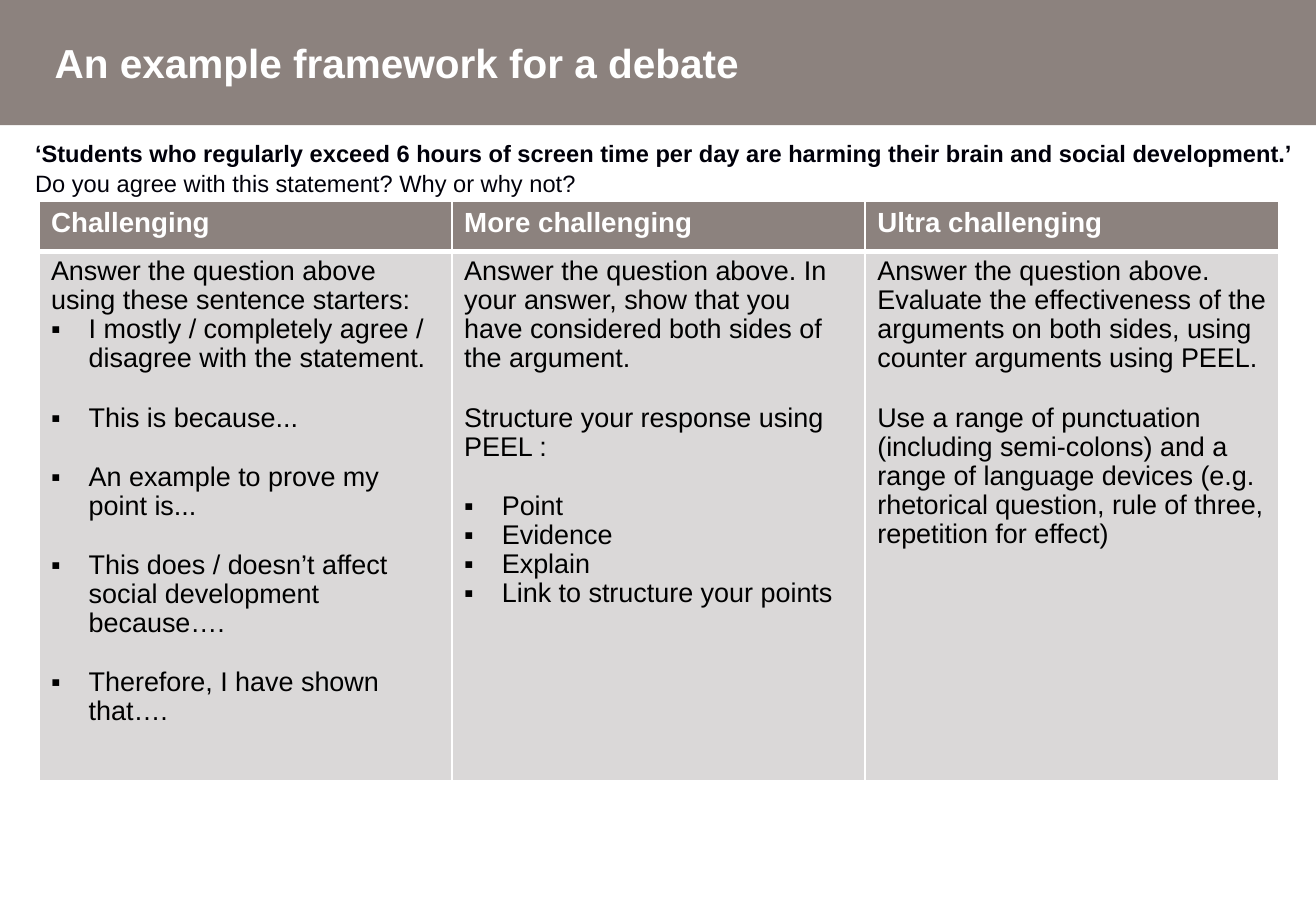
from dataclasses import dataclass

from lxml.etree import SubElement
from pptx import Presentation
from pptx.dml.color import RGBColor
from pptx.enum.shapes import MSO_SHAPE
from pptx.enum.text import MSO_ANCHOR
from pptx.oxml.ns import qn
from pptx.util import Inches, Pt

COLORS = {
    "taupe": "8C827E",
    "grey": "DAD8D8",
    "white": "FFFFFF",
    "ink": "00000A",
    "black": "000000",
}
FONT = "Arial"
BODY_GAP = 17.8
BULLET_INDENT = Inches(0.31)
HEADER_HEIGHT = 0.41
BODY_HEIGHT = 4.36
COLUMN_WIDTH = 3.4


@dataclass(frozen=True)
class Line:
    text: str
    size: float = 16
    color: str = "black"
    bold: bool = False
    bullet: bool = False
    gap: float = 0
    spacing: float = 0.97


@dataclass(frozen=True)
class Level:
    name: str
    lines: list[Line]


LEVELS = [
    Level("Challenging", [
        Line("Answer the question above using these sentence starters:"),
        Line("I mostly / completely agree / disagree with the statement.", bullet=True),
        Line("This is because...", bullet=True, gap=BODY_GAP),
        Line("An example to prove my point is...", bullet=True, gap=BODY_GAP),
        Line("This does / doesn’t affect social development because….", bullet=True, gap=BODY_GAP),
        Line("Therefore, I have shown that….", bullet=True, gap=BODY_GAP),
    ]),
    Level("More challenging", [
        Line("Answer the question above. In your answer, show that you have "
             "considered both sides of the argument."),
        Line("Structure your response using PEEL :", gap=BODY_GAP),
        Line("Point", bullet=True, gap=BODY_GAP),
        Line("Evidence", bullet=True),
        Line("Explain", bullet=True),
        Line("Link to structure your points", bullet=True),
    ]),
    Level("Ultra challenging", [
        Line("Answer the question above. Evaluate the effectiveness of the arguments "
             "on both sides, using counter arguments using PEEL."),
        Line("Use a range of punctuation (including semi-colons) and a range of language "
             "devices (e.g. rhetorical question, rule of three, repetition for effect)",
             gap=BODY_GAP),
    ]),
]
STATEMENT = [
    Line("‘Students who regularly exceed 6 hours of screen time per day are harming "
         "their brain and social development.’", 14, "ink", bold=True, spacing=1.07),
    Line("Do you agree with this statement? Why or why not?", 14, "ink", spacing=1.07),
]


def rgb(name: str) -> RGBColor:
    """Return the named palette colour."""
    return RGBColor.from_string(COLORS[name])


def write_lines(frame, lines: list[Line]) -> None:
    """Fill a text frame with one paragraph per line."""
    frame.word_wrap = True
    for index, line in enumerate(lines):
        paragraph = frame.add_paragraph() if index else frame.paragraphs[0]
        if line.bullet:
            properties = paragraph._p.get_or_add_pPr()
            properties.set("marL", str(BULLET_INDENT))
            properties.set("indent", str(-BULLET_INDENT))
            SubElement(properties, qn("a:buFont"), typeface=FONT)
            SubElement(properties, qn("a:buChar"), char="▪")
        paragraph.line_spacing = line.spacing
        if line.gap:
            paragraph.space_before = Pt(line.gap)
        run = paragraph.add_run()
        run.text = line.text
        run.font.name = FONT
        run.font.size = Pt(line.size)
        run.font.bold = line.bold
        run.font.color.rgb = rgb(line.color)


def add_text(slide, left: float, top: float, width: float, height: float,
             lines: list[Line], inset: tuple[float, float]) -> None:
    """Add a vertically centred text box with side and top insets."""
    frame = slide.shapes.add_textbox(
        Inches(left), Inches(top), Inches(width), Inches(height)).text_frame
    frame.margin_left = frame.margin_right = Inches(inset[0])
    frame.margin_top = frame.margin_bottom = Inches(inset[1])
    frame.vertical_anchor = MSO_ANCHOR.MIDDLE
    write_lines(frame, lines)


def style_cell(cell, fill: str, top: float, bottom: float) -> None:
    """Give a cell white borders and a solid fill."""
    properties = cell._tc.get_or_add_tcPr()
    for side, points in (("L", 1), ("R", 1), ("T", top), ("B", bottom)):
        border = SubElement(properties, qn(f"a:ln{side}"), w=str(Pt(points)))
        solid = SubElement(border, qn("a:solidFill"))
        SubElement(solid, qn("a:srgbClr"), val=COLORS["white"])
    cell.fill.solid()
    cell.fill.fore_color.rgb = rgb(fill)


def add_levels(slide) -> None:
    """Add the table with one column per level of challenge."""
    table = slide.shapes.add_table(
        2, len(LEVELS), Inches(0.32), Inches(1.66),
        Inches(COLUMN_WIDTH * len(LEVELS)), Inches(HEADER_HEIGHT + BODY_HEIGHT)).table
    table.horz_banding = False
    table.rows[0].height = Inches(HEADER_HEIGHT)
    table.rows[1].height = Inches(BODY_HEIGHT)
    for column, level in enumerate(LEVELS):
        table.columns[column].width = Inches(COLUMN_WIDTH)
        header, body = table.cell(0, column), table.cell(1, column)
        style_cell(header, "taupe", 1, 3)
        style_cell(body, "grey", 3, 1)
        write_lines(header.text_frame, [Line(level.name, 16.4, "white", bold=True, spacing=1)])
        write_lines(body.text_frame, level.lines)


def main() -> None:
    """Build the debate framework slide."""
    presentation = Presentation()
    presentation.slide_width = Inches(10.83)
    presentation.slide_height = Inches(7.5)
    slide = presentation.slides.add_slide(presentation.slide_layouts[6])

    banner = slide.shapes.add_shape(
        MSO_SHAPE.RECTANGLE, 0, 0, presentation.slide_width, Inches(1.03))
    banner.shadow.inherit = False
    banner.fill.solid()
    banner.fill.fore_color.rgb = rgb("taupe")
    banner.line.fill.background()

    title = Line("An example framework for a debate", 24, "white", bold=True, spacing=1)
    add_text(slide, 0.45, 0.12, 9.94, 0.79, [title], (0, 0))
    add_text(slide, 0.19, 1.09, 10.65, 0.57, STATEMENT, (0.1, 0.05))
    add_levels(slide)
    presentation.save("out.pptx")


if __name__ == "__main__":
    main()
